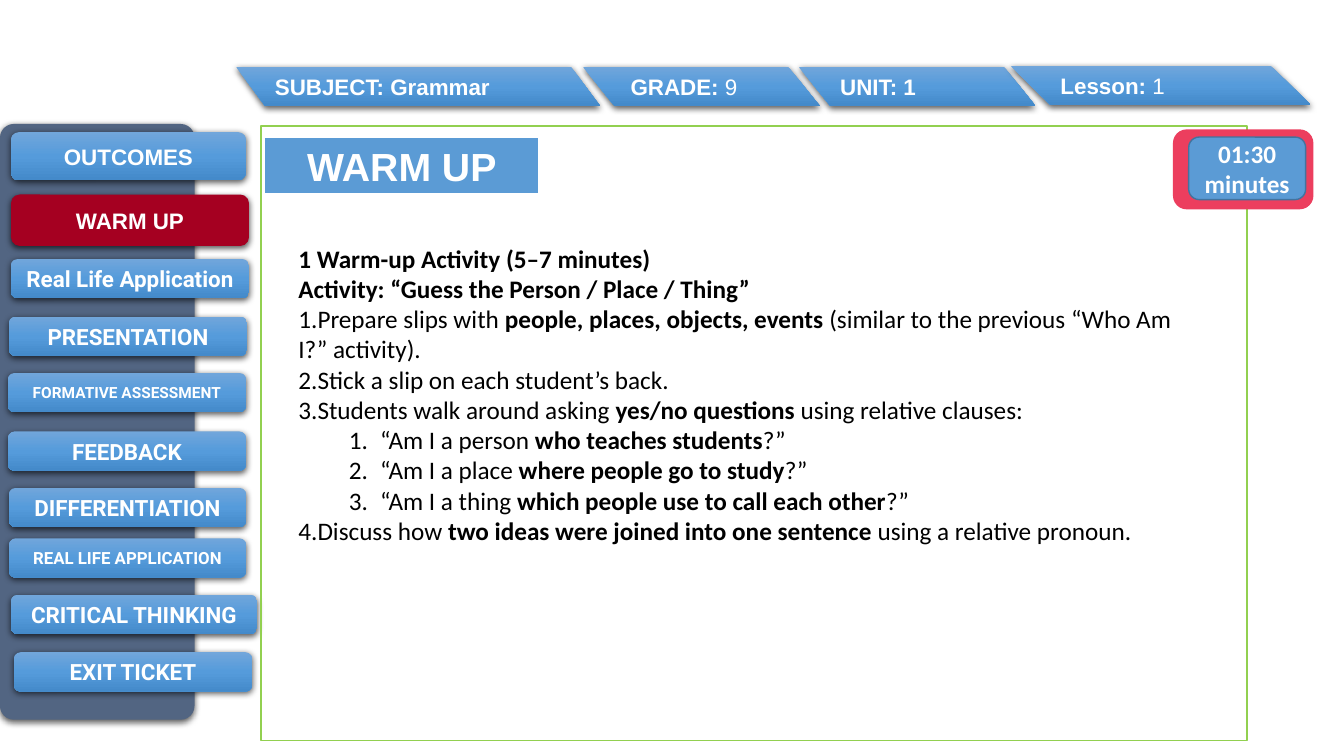
from copy import deepcopy

from lxml import etree
from pptx import Presentation
from pptx.dml.color import RGBColor
from pptx.enum.shapes import MSO_SHAPE
from pptx.enum.text import MSO_ANCHOR, MSO_AUTO_SIZE, PP_ALIGN
from pptx.oxml.ns import qn
from pptx.util import Inches, Pt

ROUNDED = MSO_SHAPE.ROUNDED_RECTANGLE
RECTANGLE = MSO_SHAPE.RECTANGLE
WAVE = MSO_SHAPE.DOUBLE_WAVE
MIDDLE = MSO_ANCHOR.MIDDLE
TOP = MSO_ANCHOR.TOP
LEFT = PP_ALIGN.LEFT
CENTER = PP_ALIGN.CENTER
FIXED = MSO_AUTO_SIZE.NONE

COLORS = {
    "sidebar": "526582",
    "active": "A50021",
    "frame": "92D050",
    "timer": "EC3E5E",
    "blue": "5B9BD5",
    "blue_edge": "43739E",
    "light": "71A6DB",
    "mid": "559BDB",
    "deep": "448ACA",
    "white": "FFFFFF",
    "black": "000000",
}
GLOSS = ((0, "light"), (0.5, "mid"), (1, "deep"))

NAVIGATION = [
    ("OUTCOMES", 0.11, 1.31, 2.33, 0.48, "Arial", 16),
    ("WARM UP", 0.11, 1.93, 2.36, 0.51, "Arial", 16),
    ("Real Life Application", 0.11, 2.57, 2.36, 0.39, "Roboto", 16),
    ("PRESENTATION", 0.09, 3.14, 2.36, 0.39, "Roboto", 16),
    ("FORMATIVE ASSESSMENT", 0.08, 3.7, 2.36, 0.39, "Roboto", 11),
    ("FEEDBACK", 0.08, 4.28, 2.36, 0.39, "Roboto", 16),
    ("DIFFERENTIATION", 0.09, 4.84, 2.35, 0.39, "Roboto", 16),
    ("REAL LIFE APPLICATION", 0.09, 5.34, 2.35, 0.39, "Roboto", 12),
    ("CRITICAL THINKING", 0.11, 5.9, 2.44, 0.39, "Roboto", 16),
    ("EXIT TICKET", 0.14, 6.47, 2.36, 0.39, "Roboto", 16),
]
LESSON_FACTS = [
    ("*UNIT: 1*", 7.92, 0.66, 2.35, 0.067),
    ("* GRADE: *9", 5.78, 0.66, 2.35, 0.067),
    ("*SUBJECT: Grammar*", 2.34, 0.66, 3.61, 0.04),
    ("*Lesson: *1", 10.02, 0.65, 2.98, 0.067),
]
HEADING, STEP, QUESTION = range(3)
ACTIVITY = [
    (HEADING, "*1 Warm-up Activity (5–7 minutes)*"),
    (HEADING, "*Activity: “Guess the Person / Place / Thing”*"),
    (STEP, "Prepare slips with *people, places, objects, events* "
           "(similar to the previous “Who Am I?” activity)."),
    (STEP, "Stick a slip on each student’s back."),
    (STEP, "Students walk around asking *yes/no questions* using relative clauses:"),
    (QUESTION, "“Am I a person *who teaches students*?”"),
    (QUESTION, "“Am I a place *where people go to study*?”"),
    (QUESTION, "“Am I a thing *which people use to call each other*?”"),
    (STEP, "Discuss how *two ideas were joined into one sentence* using a relative pronoun."),
]


def rgb(name):
    return RGBColor.from_string(COLORS[name])


def add_panel(shapes, kind, box, fill=None, line=None):
    panel = shapes.add_shape(kind, *map(Inches, box))
    panel.shadow.inherit = False
    if fill:
        panel.fill.solid()
        panel.fill.fore_color.rgb = rgb(fill)
    else:
        panel.fill.background()
    if line:
        panel.line.color.rgb = rgb(line)
        panel.line.width = Pt(1)
    else:
        panel.line.fill.background()
    return panel


def add_gloss(panel):
    panel.fill.gradient()
    panel.fill.gradient_angle = 270
    stop_list = panel.element.spPr.find(".//" + qn("a:gsLst"))
    stop_list.append(deepcopy(stop_list[0]))
    for stop, (position, color) in zip(panel.fill.gradient_stops, GLOSS):
        stop.position = position
        stop.color.rgb = rgb(color)


def add_shadow(panel):
    effects = panel.element.spPr.find(qn("a:effectLst"))
    shadow = etree.SubElement(
        effects, qn("a:outerShdw"), blurRad=str(Pt(4.5)), dist=str(Pt(1.5)),
        dir="5400000", algn="ctr", rotWithShape="0")
    shade = etree.SubElement(shadow, qn("a:srgbClr"), val=COLORS["black"])
    etree.SubElement(shade, qn("a:alpha"), val="63000")


def write_runs(paragraph, marked_text, font, size, color):
    for index, part in enumerate(marked_text.split("*")):
        if part:
            run = paragraph.add_run()
            run.text = part
            run.font.name = font
            run.font.size = Pt(size)
            run.font.bold = index % 2 == 1
            run.font.color.rgb = rgb(color)


def write_label(shape, marked_text, font, size, align=CENTER):
    frame = shape.text_frame
    frame.word_wrap = True
    frame.auto_size = FIXED
    frame.vertical_anchor = MIDDLE
    frame.paragraphs[0].alignment = align
    write_runs(frame.paragraphs[0], marked_text, font, size, "white")


def set_numbering(paragraph, level):
    props = paragraph._p.get_or_add_pPr()
    nested = level == QUESTION
    props.set("marL", str(Inches(0.81) if nested else 0))
    props.set("indent", str(Inches(-0.31) if nested else 0))
    if level == HEADING:
        etree.SubElement(props, qn("a:buNone"))
    else:
        etree.SubElement(props, qn("a:buFont"), typeface="+mj-lt")
        etree.SubElement(props, qn("a:buAutoNum"), type="arabicPeriod")


def place(placeholder, box):
    placeholder.left, placeholder.top, placeholder.width, placeholder.height = map(Inches, box)


def add_navigation(shapes):
    sidebar = add_panel(shapes, ROUNDED, (0, 1.23, 1.93, 5.91), "sidebar")
    sidebar.adjustments[0] = 0.071
    add_shadow(sidebar)
    for label, left, top, width, height, font, size in NAVIGATION:
        button = add_panel(shapes, ROUNDED, (left, top, width, height), "active")
        if label != "WARM UP":
            add_gloss(button)
        add_shadow(button)
        write_label(button, f"*{label}*", font, size)


def add_lesson_facts(shapes):
    for text, left, top, width, slant in LESSON_FACTS:
        ribbon = add_panel(shapes, WAVE, (left, top, width, 0.39), "blue")
        ribbon.adjustments[0] = 0
        ribbon.adjustments[1] = slant
        add_gloss(ribbon)
        add_shadow(ribbon)
        write_label(ribbon, text, "Arial", 16, LEFT)


def add_timer(shapes):
    timer = shapes.add_group_shape().shapes
    add_panel(timer, ROUNDED, (11.64, 1.29, 1.38, 0.78), "timer", "timer")
    face = add_panel(timer, ROUNDED, (11.79, 1.36, 1.16, 0.62), "blue", "blue_edge")
    write_label(face, "*01:30 minutes*", "Calibri", 18)


def fill_title(title):
    place(title, (2.62, 1.36, 2.73, 0.57))
    title.fill.solid()
    title.fill.fore_color.rgb = rgb("blue")
    title.line.color.rgb = rgb("white")
    title.line.width = Pt(1.5)
    write_label(title, "*WARM UP*", "Arial", 28)


def fill_activity(body):
    place(body, (2.86, 2.36, 9.07, 3.13))
    frame = body.text_frame
    frame.word_wrap = True
    frame.vertical_anchor = TOP
    frame.auto_size = FIXED
    for index, (level, text) in enumerate(ACTIVITY):
        paragraph = frame.add_paragraph() if index else frame.paragraphs[0]
        paragraph.level = 1 if level == QUESTION else 0
        paragraph.alignment = LEFT
        paragraph.line_spacing = 1.0
        paragraph.space_before = paragraph.space_after = Pt(0)
        set_numbering(paragraph, level)
        write_runs(paragraph, text, "Calibri", 18, "black")


def main():
    deck = Presentation()
    deck.slide_width, deck.slide_height = Inches(13.33), Inches(7.5)
    slide = deck.slides.add_slide(deck.slide_layouts[1])
    add_navigation(slide.shapes)
    add_panel(slide.shapes, RECTANGLE, (2.59, 1.25, 9.78, 6.1), line="frame")
    add_timer(slide.shapes)
    add_lesson_facts(slide.shapes)
    fill_title(slide.shapes.title)
    fill_activity(slide.placeholders[1])
    deck.save("out.pptx")


if __name__ == "__main__":
    main()
